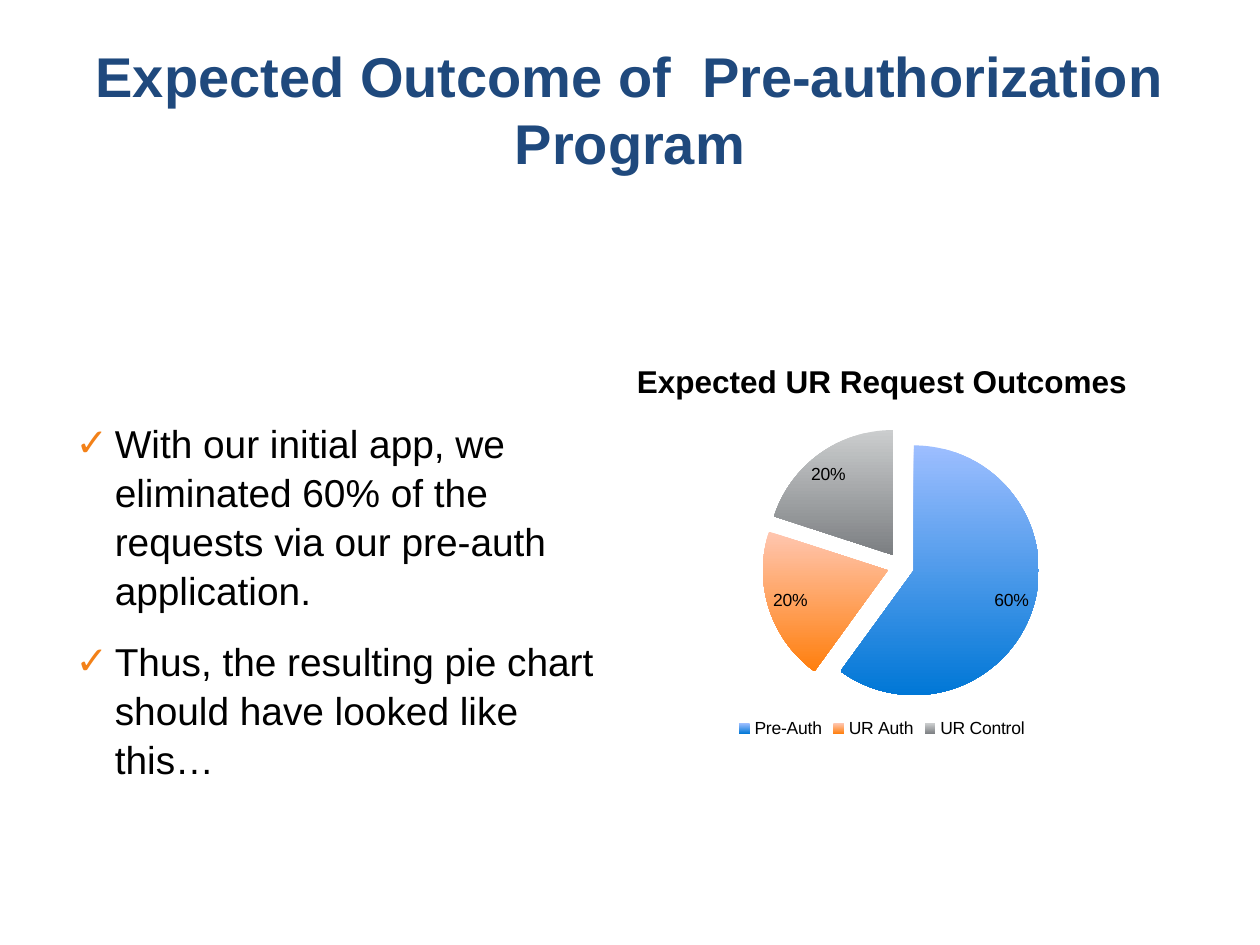
import pptx
import pptx.chart.data
import pptx.dml.color
import pptx.enum.chart
import pptx.enum.text
import pptx.oxml
import pptx.oxml.ns
import pptx.util
from pptx.util import Cm, Pt

HEADING = "Expected Outcome of  Pre-authorization Program"
POINTS = [
    "With our initial app, we eliminated 60% of the requests via our pre-auth application.",
    "Thus, the resulting pie chart should have looked like this…",
]
PIE_TITLE = "Expected UR Request Outcomes"
# outcome, share, gradient top, gradient bottom
OUTCOMES = [
    ("Pre-Auth", 0.6, "9DBEFF", "0077D6"),
    ("UR Auth", 0.2, "FFC6B0", "FF7F0E"),
    ("UR Control", 0.2, "CBCDCE", "7C7F82"),
]
THEME = {
    "font": "Arial", "heading": "1F497D", "text": "000000", "check": "F38118",
    "heading_size": 32, "body_size": 22.2, "pie_title_size": 18, "pie_size": 10,
}
HEADING_BOX = (1.27, 1.02, 22.86, 2.34)
POINTS_BOX = (1.27, 8.28, 11.23, 6.7)
PIE_BOX = (11.43, 6.86, 12.7, 8.13)
PLOT = {"x": 0.31, "y": 0.19, "w": 0.44, "h": 0.74}
EXPLOSION = 11


def box(lengths):
    return [Cm(length) for length in lengths]


def place(placeholder, lengths):
    placeholder.left, placeholder.top, placeholder.width, placeholder.height = box(lengths)
    placeholder.text_frame.word_wrap = True
    placeholder.text_frame.auto_size = pptx.enum.text.MSO_AUTO_SIZE.NONE


def style(font, size, color="text", bold=False):
    font.name = THEME["font"]
    font.size = Pt(size)
    font.bold = bold
    font.color.rgb = pptx.dml.color.RGBColor.from_string(THEME[color])


def add_check_bullet(paragraph):
    properties = paragraph._p.get_or_add_pPr()
    properties.set("marL", str(Cm(0.79)))
    properties.set("indent", str(-Cm(0.79)))
    namespace = pptx.oxml.ns.nsdecls("a")
    for xml in (
        f'<a:buClr {namespace}><a:srgbClr val="{THEME["check"]}"/></a:buClr>',
        f'<a:buChar {namespace} char="✓"/>',
    ):
        properties.append(pptx.oxml.parse_xml(xml))


def add_heading(slide):
    heading = slide.shapes.title
    place(heading, HEADING_BOX)
    heading.text_frame.vertical_anchor = pptx.enum.text.MSO_ANCHOR.MIDDLE
    paragraph = heading.text_frame.paragraphs[0]
    paragraph.alignment = pptx.enum.text.PP_ALIGN.CENTER
    run = paragraph.add_run()
    run.text = HEADING
    style(run.font, THEME["heading_size"], "heading", bold=True)


def add_points(slide):
    body = slide.placeholders[1]
    place(body, POINTS_BOX)
    frame = body.text_frame
    for index, point in enumerate(POINTS):
        paragraph = frame.add_paragraph() if index else frame.paragraphs[0]
        paragraph.space_before = Pt(12.7 if index else 0)
        paragraph.line_spacing = 1.05
        add_check_bullet(paragraph)
        run = paragraph.add_run()
        run.text = point
        style(run.font, THEME["body_size"])


def set_plot_layout(chart):
    """Fix the inner plot area as fractions of the chart."""
    modes = "".join(f'<c:{axis}Mode val="edge"/>' for axis in "xy")
    sizes = "".join(f'<c:{key} val="{value}"/>' for key, value in PLOT.items())
    layout = pptx.oxml.parse_xml(
        f'<c:layout {pptx.oxml.ns.nsdecls("c")}><c:manualLayout>'
        f'<c:layoutTarget val="inner"/>{modes}{sizes}</c:manualLayout></c:layout>'
    )
    plot_area = chart._chartSpace.chart.plotArea
    for old in plot_area.findall(pptx.oxml.ns.qn("c:layout")):
        plot_area.remove(old)
    plot_area.insert(0, layout)


def explode(series):
    explosion = pptx.oxml.parse_xml(
        f'<c:explosion {pptx.oxml.ns.nsdecls("c")} val="{EXPLOSION}"/>'
    )
    series.format.fill.background()
    series._element.find(pptx.oxml.ns.qn("c:spPr")).addnext(explosion)


def add_pie(slide):
    data = pptx.chart.data.CategoryChartData(number_format="0%")
    data.categories = [outcome[0] for outcome in OUTCOMES]
    data.add_series("Series 1", [outcome[1] for outcome in OUTCOMES])
    chart = slide.shapes.add_chart(
        pptx.enum.chart.XL_CHART_TYPE.PIE, *box(PIE_BOX), data
    ).chart
    style(chart.font, THEME["pie_size"])

    chart.has_title = True
    run = chart.chart_title.text_frame.paragraphs[0].add_run()
    run.text = PIE_TITLE
    style(run.font, THEME["pie_title_size"], bold=True)

    chart.has_legend = True
    chart.legend.position = pptx.enum.chart.XL_LEGEND_POSITION.BOTTOM
    chart.legend.include_in_layout = False
    style(chart.legend.font, THEME["pie_size"])
    set_plot_layout(chart)

    plot = chart.plots[0]
    plot.vary_by_categories = True
    plot.has_data_labels = True
    labels = plot.data_labels
    labels.show_value = True
    labels.show_percentage = False
    labels.number_format = "0%"
    labels.number_format_is_linked = False
    labels.position = pptx.enum.chart.XL_LABEL_POSITION.INSIDE_BASE
    style(labels.font, THEME["pie_size"])

    series = plot.series[0]
    explode(series)
    for index, (_, _, *gradient) in enumerate(OUTCOMES):
        slice_format = series.points[index].format
        slice_format.line.fill.background()
        slice_format.fill.gradient()
        slice_format.fill.gradient_angle = 270
        for stop, color in zip(slice_format.fill.gradient_stops, gradient):
            stop.color.rgb = pptx.dml.color.RGBColor.from_string(color)


def main():
    presentation = pptx.Presentation()
    presentation.slide_width, presentation.slide_height = box((25.4, 19.05))
    slide = presentation.slides.add_slide(presentation.slide_layouts[1])
    add_heading(slide)
    add_points(slide)
    add_pie(slide)
    presentation.save("out.pptx")


if __name__ == "__main__":
    main()
